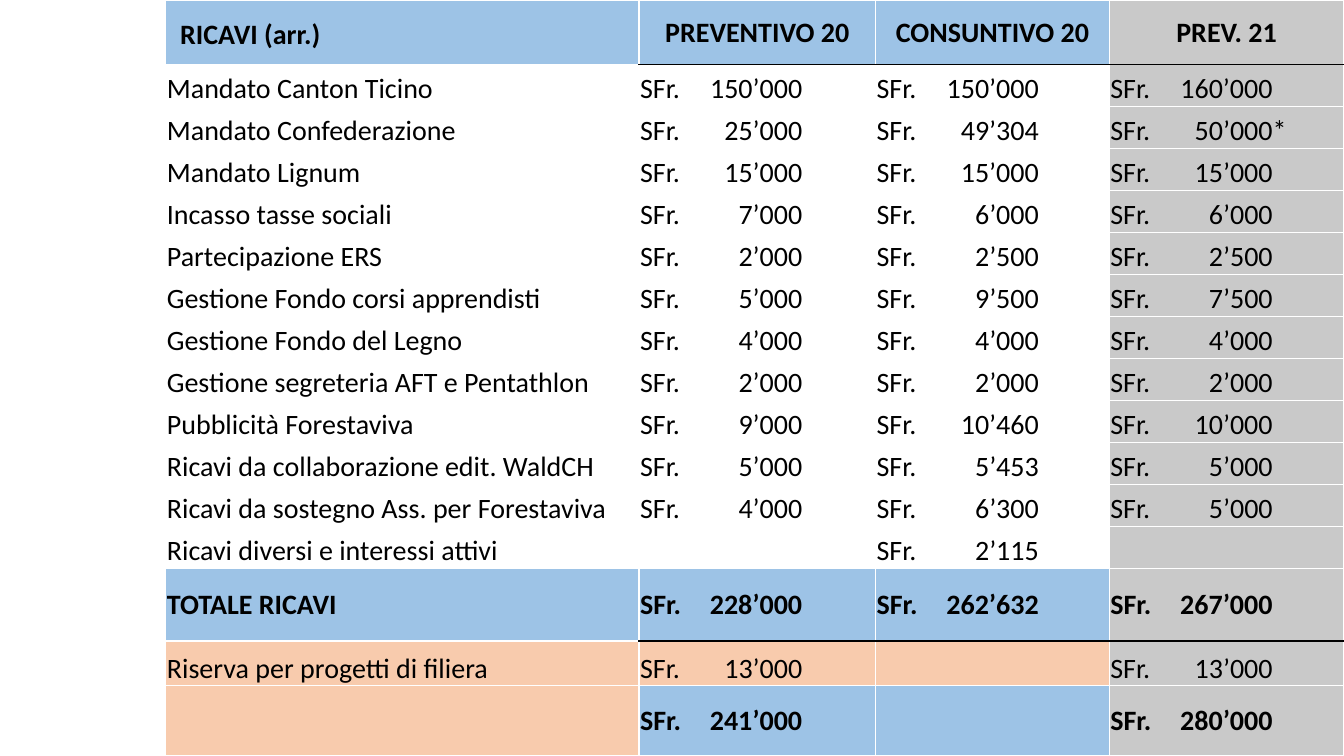
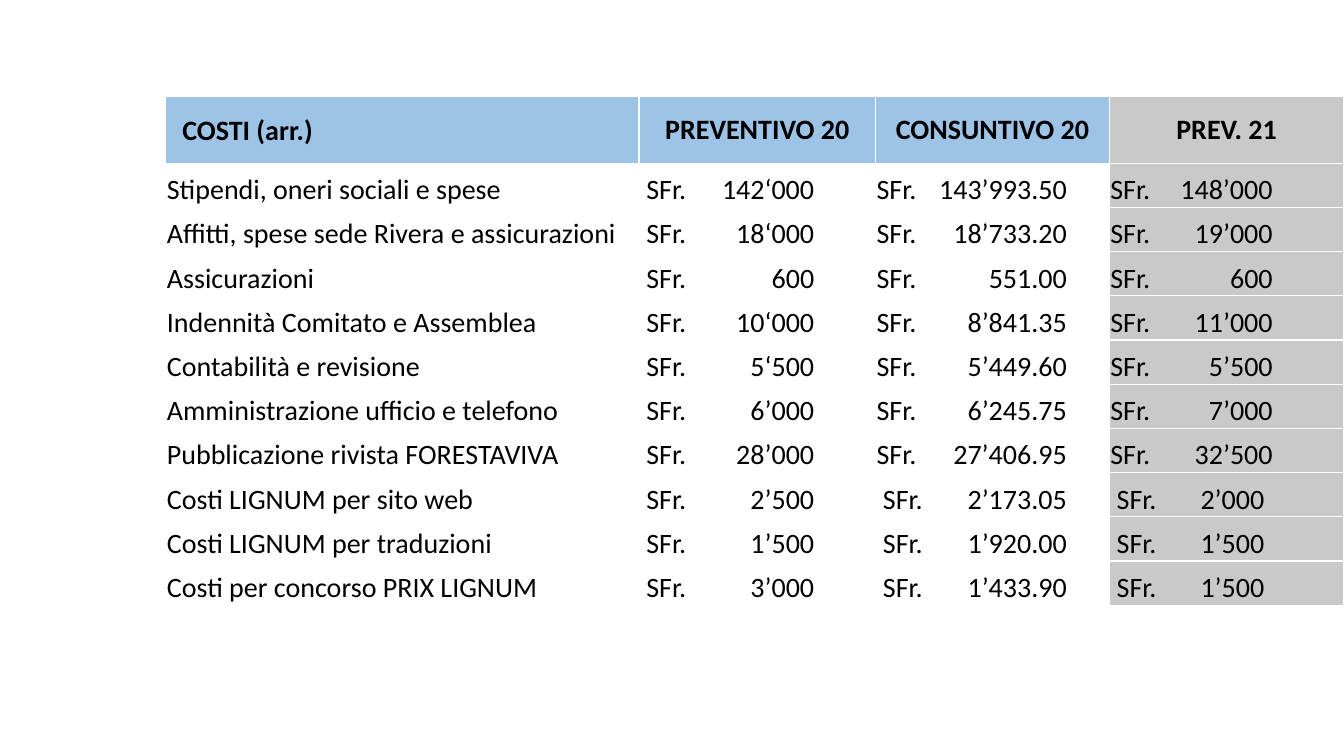
from dataclasses import dataclass

from lxml.etree import SubElement
from pptx import Presentation
from pptx.dml.color import RGBColor
from pptx.enum.text import MSO_ANCHOR, MSO_AUTO_SIZE, PP_ALIGN
from pptx.oxml.ns import qn
from pptx.util import Pt

FONT, SIZE = "Calibri", 20
BLUE, GRAY, PEACH = "9DC3E6", "C9C9C9", "F8CBAD"
BLACK, WHITE = "000000", "FFFFFF"
TABLE_LEFT = 118.5
COLUMN_WIDTHS = (338, 169, 167, 167.5)
INSET = 0.72
STAR_WIDTH = 10
TITLE_ONLY = 5


@dataclass
class RowStyle:
    """Look of one table row; columns holds (indent, right tab stop) pairs for the amounts."""

    height: float
    fills: tuple
    columns: tuple = ()
    bold: bool = False
    anchor: MSO_ANCHOR = MSO_ANCHOR.MIDDLE
    ruled: bool = False


HEADER_FILLS = (BLUE, BLUE, BLUE, GRAY)
BODY_FILLS = (None, None, None, GRAY)
BOTTOM = MSO_ANCHOR.BOTTOM

INCOME_COLUMNS = ((0, 116),) * 3
INCOME_HEADER = RowStyle(46, HEADER_FILLS, bold=True, ruled=True)
INCOME_BODY = RowStyle(30, BODY_FILLS, INCOME_COLUMNS, anchor=BOTTOM)
INCOME_TOTAL = RowStyle(52, HEADER_FILLS, INCOME_COLUMNS, bold=True, ruled=True)
RESERVE = RowStyle(32, (PEACH, PEACH, PEACH, GRAY), INCOME_COLUMNS, anchor=BOTTOM)
GRAND_TOTAL = RowStyle(50, (PEACH, BLUE, BLUE, GRAY), INCOME_COLUMNS, bold=True)

COST_HEADER = RowStyle(48, HEADER_FILLS, bold=True)
COST_BODY = RowStyle(31.6, BODY_FILLS, ((4.5, 124.5), (0, 136), (0, 116)), anchor=BOTTOM)
COST_LIGNUM = RowStyle(31.6, BODY_FILLS, ((4.5, 124.5), (4.5, 136), (4.5, 110)), anchor=BOTTOM)

HEADINGS = ("", "PREVENTIVO 20", "CONSUNTIVO 20", "PREV. 21")

INCOME_ROWS = [
    (INCOME_HEADER, HEADINGS),
    (INCOME_BODY, ("Mandato Canton Ticino", "150’000", "150’000", "160’000")),
    (INCOME_BODY, ("Mandato Confederazione", "25’000", "49’304", "50’000*")),
    (INCOME_BODY, ("Mandato Lignum", "15’000", "15’000", "15’000")),
    (INCOME_BODY, ("Incasso tasse sociali", "7’000", "6’000", "6’000")),
    (INCOME_BODY, ("Partecipazione ERS", "2’000", "2’500", "2’500")),
    (INCOME_BODY, ("Gestione Fondo corsi apprendisti", "5’000", "9’500", "7’500")),
    (INCOME_BODY, ("Gestione Fondo del Legno", "4’000", "4’000", "4’000")),
    (INCOME_BODY, ("Gestione segreteria AFT e Pentathlon", "2’000", "2’000", "2’000")),
    (INCOME_BODY, ("Pubblicità Forestaviva", "9’000", "10’460", "10’000")),
    (INCOME_BODY, ("Ricavi da collaborazione edit. WaldCH", "5’000", "5’453", "5’000")),
    (INCOME_BODY, ("Ricavi da sostegno Ass. per Forestaviva", "4’000", "6’300", "5’000")),
    (INCOME_BODY, ("Ricavi diversi e interessi attivi", "", "2’115", "")),
    (INCOME_TOTAL, ("TOTALE RICAVI", "228’000", "262’632", "267’000")),
    (RESERVE, ("Riserva per progetti di filiera", "13’000", "", "13’000")),
    (GRAND_TOTAL, ("", "241’000", "", "280’000")),
]

COST_ROWS = [
    (COST_HEADER, HEADINGS),
    (COST_BODY, ("Stipendi, oneri sociali e spese", "142‘000", "143’993.50", "148’000")),
    (COST_BODY, ("Affitti, spese sede Rivera e assicurazioni", "18‘000", "18’733.20", "19’000")),
    (COST_BODY, ("Assicurazioni", "600", "551.00", "600")),
    (COST_BODY, ("Indennità Comitato e Assemblea", "10‘000", "8’841.35", "11’000")),
    (COST_BODY, ("Contabilità e revisione", "5‘500", "5’449.60", "5’500")),
    (COST_BODY, ("Amministrazione ufficio e telefono", "6’000", "6’245.75", "7’000")),
    (COST_BODY, ("Pubblicazione rivista FORESTAVIVA", "28’000", "27’406.95", "32’500")),
    (COST_LIGNUM, ("Costi LIGNUM per sito web", "2’500", "2’173.05", "2’000")),
    (COST_LIGNUM, ("Costi LIGNUM per traduzioni", "1’500", "1’920.00", "1’500")),
    (COST_LIGNUM, ("Costi per concorso PRIX LIGNUM", "3’000", "1’433.90", "1’500")),
]


def color(hex_string):
    """Turn a hex string into a colour."""
    return RGBColor.from_string(hex_string)


def set_font(paragraph, bold):
    """Give a paragraph the shared font."""
    font = paragraph.font
    font.name, font.size, font.bold = FONT, Pt(SIZE), bold
    font.color.rgb = color(BLACK)


def set_borders(cell, top, bottom):
    """Draw one-point borders, white at the sides."""
    properties = cell._tc.get_or_add_tcPr()
    sides = (("a:lnL", WHITE), ("a:lnR", WHITE), ("a:lnT", top), ("a:lnB", bottom))
    for position, (tag, line_color) in enumerate(sides):
        line = SubElement(properties, qn(tag), w=str(Pt(1)))
        fill = SubElement(line, qn("a:solidFill"))
        SubElement(fill, qn("a:srgbClr"), val=line_color)
        properties.insert(position, line)


def add_right_tab(paragraph, stop):
    """Add a right-aligned tab stop to a paragraph."""
    tabs = SubElement(paragraph._p.get_or_add_pPr(), qn("a:tabLst"))
    SubElement(tabs, qn("a:tab"), pos=str(Pt(stop)), algn="r")


def fill_cell(cell, text, style, column):
    """Write a heading, label or amount into a cell and format it."""
    cell.margin_left = cell.margin_right = cell.margin_top = Pt(INSET)
    cell.margin_bottom = 0
    cell.vertical_anchor = style.anchor
    paragraph = cell.text_frame.paragraphs[0]
    paragraph.text = text
    if column and not style.columns:
        paragraph.alignment = PP_ALIGN.CENTER
    elif column and text:
        indent, stop = style.columns[column - 1]
        paragraph.text = f"SFr.\t{text}"
        cell.margin_left = Pt(INSET + indent)
        add_right_tab(paragraph, stop - indent + (STAR_WIDTH if text.endswith("*") else 0))
    set_font(paragraph, style.bold)
    if style.fills[column]:
        cell.fill.solid()
        cell.fill.fore_color.rgb = color(style.fills[column])
    else:
        cell.fill.background()


def add_budget_table(slide, top, rows):
    """Add a budget table at the shared left edge."""
    height = sum(style.height for style, _ in rows)
    frame = slide.shapes.add_table(len(rows), len(COLUMN_WIDTHS), Pt(TABLE_LEFT), Pt(top),
                                   Pt(sum(COLUMN_WIDTHS)), Pt(height))
    table = frame.table
    table.first_row = table.horz_banding = False
    for column, width in zip(table.columns, COLUMN_WIDTHS):
        column.width = Pt(width)
    ruled_above = False
    for row, (style, texts) in zip(table.rows, rows):
        row.height = Pt(style.height)
        for column, (cell, text) in enumerate(zip(row.cells, texts)):
            fill_cell(cell, text, style, column)
            set_borders(cell, BLACK if column and ruled_above else WHITE,
                        BLACK if column and style.ruled else WHITE)
        ruled_above = style.ruled


def place_title(slide, text, left, top):
    """Lay the title over the first header cell."""
    title = slide.shapes.title
    title.left, title.top, title.width, title.height = Pt(left), Pt(top), Pt(163), Pt(32)
    frame = title.text_frame
    frame.text = text
    frame.auto_size = MSO_AUTO_SIZE.NONE
    frame.vertical_anchor = MSO_ANCHOR.TOP
    frame.margin_left = frame.margin_right = Pt(7.2)
    frame.margin_top = frame.margin_bottom = Pt(3.6)
    frame.paragraphs[0].alignment = PP_ALIGN.LEFT
    set_font(frame.paragraphs[0], True)
    title._element.getparent().append(title._element)


def add_budget_slide(presentation, title, title_left, table_top, title_offset, rows):
    """Add a slide with one budget table and its title."""
    slide = presentation.slides.add_slide(presentation.slide_layouts[TITLE_ONLY])
    add_budget_table(slide, table_top, rows)
    place_title(slide, title, title_left, table_top + title_offset)


def main():
    """Build and save the presentation."""
    presentation = Presentation()
    presentation.slide_width, presentation.slide_height = Pt(960), Pt(540)
    add_budget_slide(presentation, "RICAVI (arr.)", 121.5, 0, 8.5, INCOME_ROWS)
    add_budget_slide(presentation, "COSTI (arr.)", 123, 68.5, 8, COST_ROWS)
    presentation.save("out.pptx")


if __name__ == "__main__":
    main()
